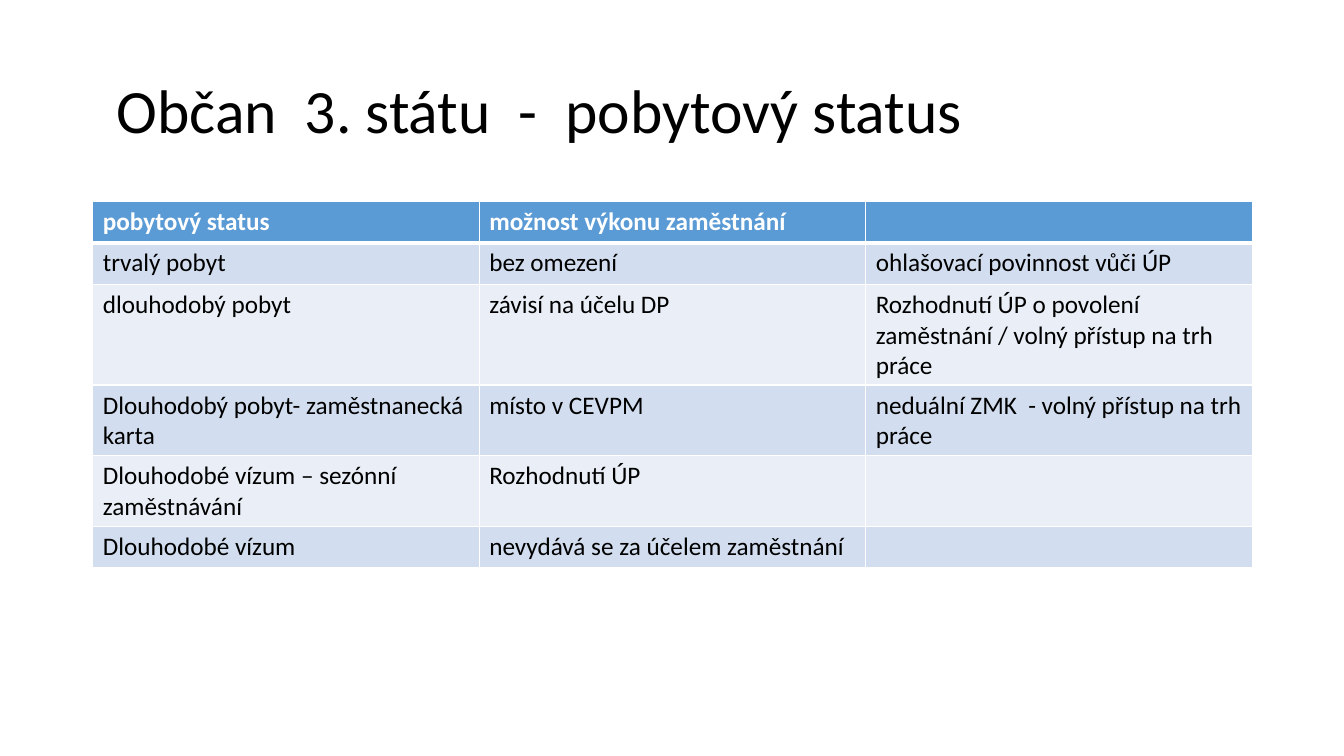
from lxml.etree import SubElement
from pptx import Presentation
from pptx.dml.color import RGBColor
from pptx.enum.text import MSO_ANCHOR
from pptx.oxml.ns import qn
from pptx.util import Inches, Pt

COLORS = {
    "black": "000000",
    "white": "FFFFFF",
    "header": "5B9BD5",
    "odd": "D2DEEF",
    "even": "EAEFF7",
}
TITLE_FORMAT = {"name": "Calibri", "size": Pt(44), "bold": False}
BODY_FORMAT = {"name": "Calibri", "size": Pt(18), "bold": False}
HEADER_FORMAT = {**BODY_FORMAT, "bold": True}

LEFT, WIDTH = 0.92, 11.5
TITLE = " Občan  3. státu  -  pobytový status"
STATUS_ROWS = [
    ("pobytový status", "možnost výkonu zaměstnání", ""),
    ("trvalý pobyt", "bez omezení", "ohlašovací povinnost vůči ÚP"),
    (
        "dlouhodobý pobyt",
        "závisí na účelu DP",
        "Rozhodnutí ÚP o povolení zaměstnání / volný přístup na trh práce",
    ),
    (
        "Dlouhodobý pobyt- zaměstnanecká karta",
        "místo v CEVPM",
        "neduální ZMK  - volný přístup na trh práce",
    ),
    ("Dlouhodobé vízum – sezónní zaměstnávání", "Rozhodnutí ÚP", ""),
    ("Dlouhodobé vízum", "nevydává se za účelem zaměstnání", ""),
]
ROW_HEIGHT = 0.41


def write_text(para, text, font_format, color):
    """Add one formatted span to a paragraph."""
    span = para.add_run()
    span.text = text
    for name, value in font_format.items():
        setattr(span.font, name, value)
    span.font.color.rgb = RGBColor.from_string(COLORS[color])


def add_title(page):
    """Add the slide heading."""
    box = page.shapes.add_textbox(
        Inches(LEFT), Inches(0.4), Inches(WIDTH), Inches(1.45)
    )
    frame = box.text_frame
    frame.word_wrap = True
    frame.vertical_anchor = MSO_ANCHOR.MIDDLE
    para = frame.paragraphs[0]
    para.line_spacing = 0.9
    write_text(para, TITLE, TITLE_FORMAT, "black")


def set_borders(cell, widths):
    """Draw white cell borders with the given widths in points."""
    properties = cell._tc.get_or_add_tcPr()
    for side, width in widths.items():
        line = SubElement(properties, qn(f"a:ln{side}"), w=str(Pt(width)))
        fill = SubElement(line, qn("a:solidFill"))
        SubElement(fill, qn("a:srgbClr"), val=COLORS["white"])


def add_status_table(page):
    """Add the table of residence statuses."""
    column_count = len(STATUS_ROWS[0])
    table = page.shapes.add_table(
        len(STATUS_ROWS), column_count, Inches(LEFT), Inches(2),
        Inches(WIDTH), Inches(ROW_HEIGHT * len(STATUS_ROWS)),
    ).table
    for column in table.columns:
        column.width = Inches(WIDTH / column_count)
    for row_index, texts in enumerate(STATUS_ROWS):
        is_header = row_index == 0
        band = "header" if is_header else ("even", "odd")[row_index % 2]
        font_format = HEADER_FORMAT if is_header else BODY_FORMAT
        color = "white" if is_header else "black"
        widths = {
            "L": 1,
            "R": 1,
            "T": 3 if row_index == 1 else 1,
            "B": 3 if is_header else 1,
        }
        for column_index, text in enumerate(texts):
            cell = table.cell(row_index, column_index)
            set_borders(cell, widths)
            cell.fill.solid()
            cell.fill.fore_color.rgb = RGBColor.from_string(COLORS[band])
            if text:
                write_text(cell.text_frame.paragraphs[0], text, font_format, color)


def main():
    """Build and save the deck."""
    deck = Presentation()
    deck.slide_width = Inches(13.33)
    deck.slide_height = Inches(7.5)
    page = deck.slides.add_slide(deck.slide_layouts[6])
    add_title(page)
    add_status_table(page)
    deck.save("out.pptx")


if __name__ == "__main__":
    main()
